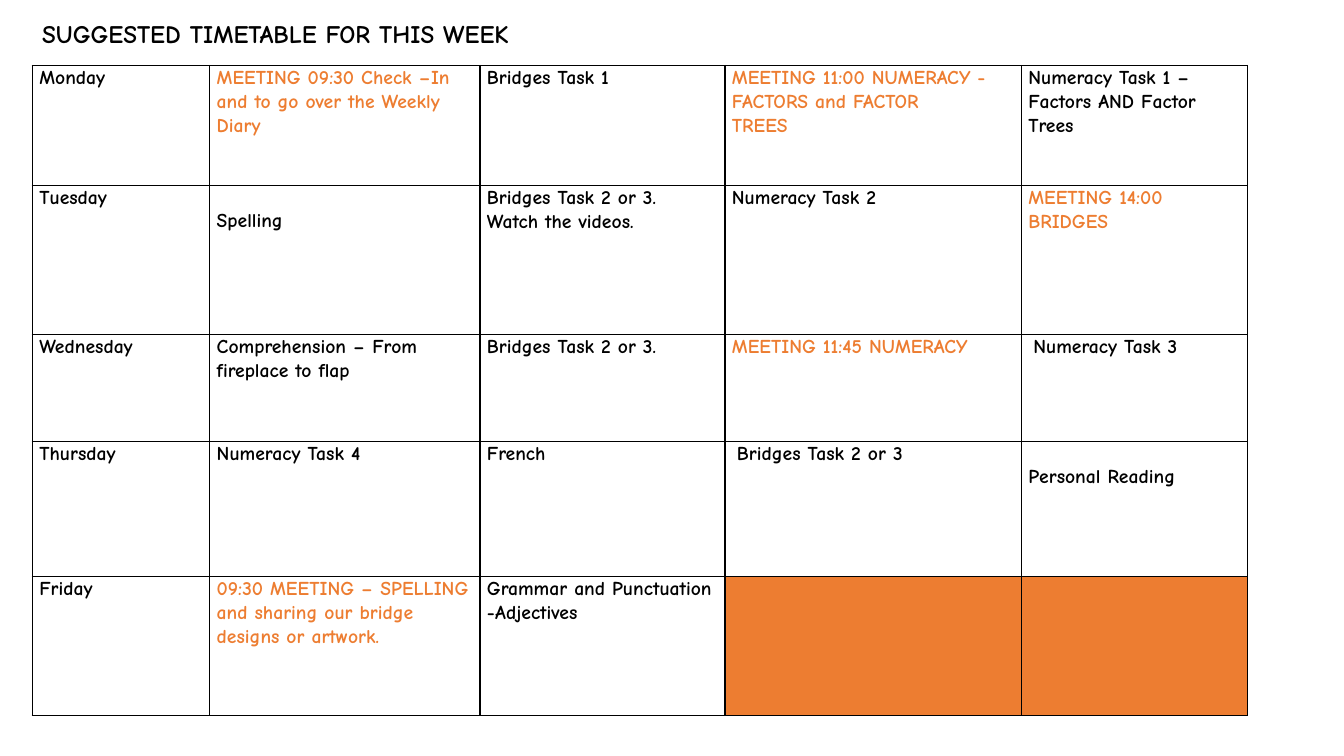
"""Build the weekly timetable slide."""
from lxml import etree
from pptx import Presentation
from pptx.dml.color import RGBColor
from pptx.enum.text import MSO_AUTO_SIZE
from pptx.oxml.ns import qn
from pptx.util import Pt

FIT = MSO_AUTO_SIZE.SHAPE_TO_FIT_TEXT
PX = 9144
FONT = "Comic Neue"
HUES = {"ink": "000000", "meet": "ED7D31"}
COLS = [176, 268, 243, 294, 224]
ROWS = [119, 148, 106, 134, 138]
PAD = 7
INDENT = {(2, 4): 5, (3, 3): 5}
DROP = {(1, 1): 23, (3, 4): 23}
WEEK = [
    ["Monday", "MEETING 09:30 Check –In and to go over the Weekly Diary",
     "Bridges Task 1",
     "MEETING 11:00 NUMERACY -\nFACTORS and FACTOR\nTREES",
     "Numeracy Task 1 –Factors AND Factor Trees"],
    ["Tuesday", "Spelling", "Bridges Task 2 or 3.\nWatch the videos.",
     "Numeracy Task 2", "MEETING 14:00 BRIDGES"],
    ["Wednesday", "Comprehension – From fireplace to flap",
     "Bridges Task 2 or 3.", "MEETING 11:45 NUMERACY", "Numeracy Task 3"],
    ["Thursday", "Numeracy Task 4", "French", "Bridges Task 2 or 3",
     "Personal Reading"],
    ["Friday",
     "09:30 MEETING – SPELLING and sharing our bridge designs or artwork.",
     "Grammar and Punctuation -Adjectives", None, None],
]


def px(*sizes):
    """Turn px lengths into EMU."""
    return [size * PX for size in sizes]


def write(frame, text, size=14, hue="ink", space=None):
    """Fill a text frame, one paragraph per line."""
    frame.text = text
    for para in frame.paragraphs:
        para.line_spacing = space
        for run in para.runs:
            font = run.font
            font.name, font.size, font.bold = FONT, Pt(size), True
            font.color.rgb = RGBColor.from_string(HUES[hue])


def border(cell):
    """Draw a thin line on all four sides of a cell."""
    props = cell._tc.get_or_add_tcPr()
    for side in "LRTB":
        line = etree.SubElement(props, qn(f"a:ln{side}"), w=str(Pt(1)))
        fill = etree.SubElement(line, qn("a:solidFill"))
        etree.SubElement(fill, qn("a:srgbClr"), val=HUES["ink"])


def fill_cell(cell, text, indent, drop):
    """Set the border, fill, margins and text of one cell."""
    border(cell)
    cell.margin_left, cell.margin_right = px(PAD + indent, PAD)
    cell.margin_top, cell.margin_bottom = px(drop, 0)
    if text is None:
        cell.fill.solid()
        cell.fill.fore_color.rgb = RGBColor.from_string(HUES["meet"])
        return
    cell.fill.background()
    hue = "meet" if "MEETING" in text else "ink"
    write(cell.text_frame, text, hue=hue, space=1.07)


def add_title(slide, text):
    """Add the heading above the table."""
    frame = slide.shapes.add_textbox(*px(32, 13, 563, 40)).text_frame
    frame.word_wrap = False
    frame.auto_size = FIT
    write(frame, text, size=18)


def add_week(slide):
    """Add the timetable grid."""
    place = px(32, 65, sum(COLS), sum(ROWS))
    table = slide.shapes.add_table(len(ROWS), len(COLS), *place).table
    table.first_row = table.horz_banding = False
    for col, wide in zip(table.columns, px(*COLS)):
        col.width = wide
    for row, high in zip(table.rows, px(*ROWS)):
        row.height = high
    for r, day in enumerate(WEEK):
        for c, text in enumerate(day):
            spot = r, c
            fill_cell(table.cell(r, c), text,
                      INDENT.get(spot, 0), DROP.get(spot, 0))


def main():
    """Build and save the slide."""
    deck = Presentation()
    deck.slide_width, deck.slide_height = px(1333, 750)
    slide = deck.slides.add_slide(deck.slide_layouts[6])
    add_week(slide)
    add_title(slide, "SUGGESTED TIMETABLE FOR THIS WEEK")
    deck.save("out.pptx")


if __name__ == "__main__":
    main()
